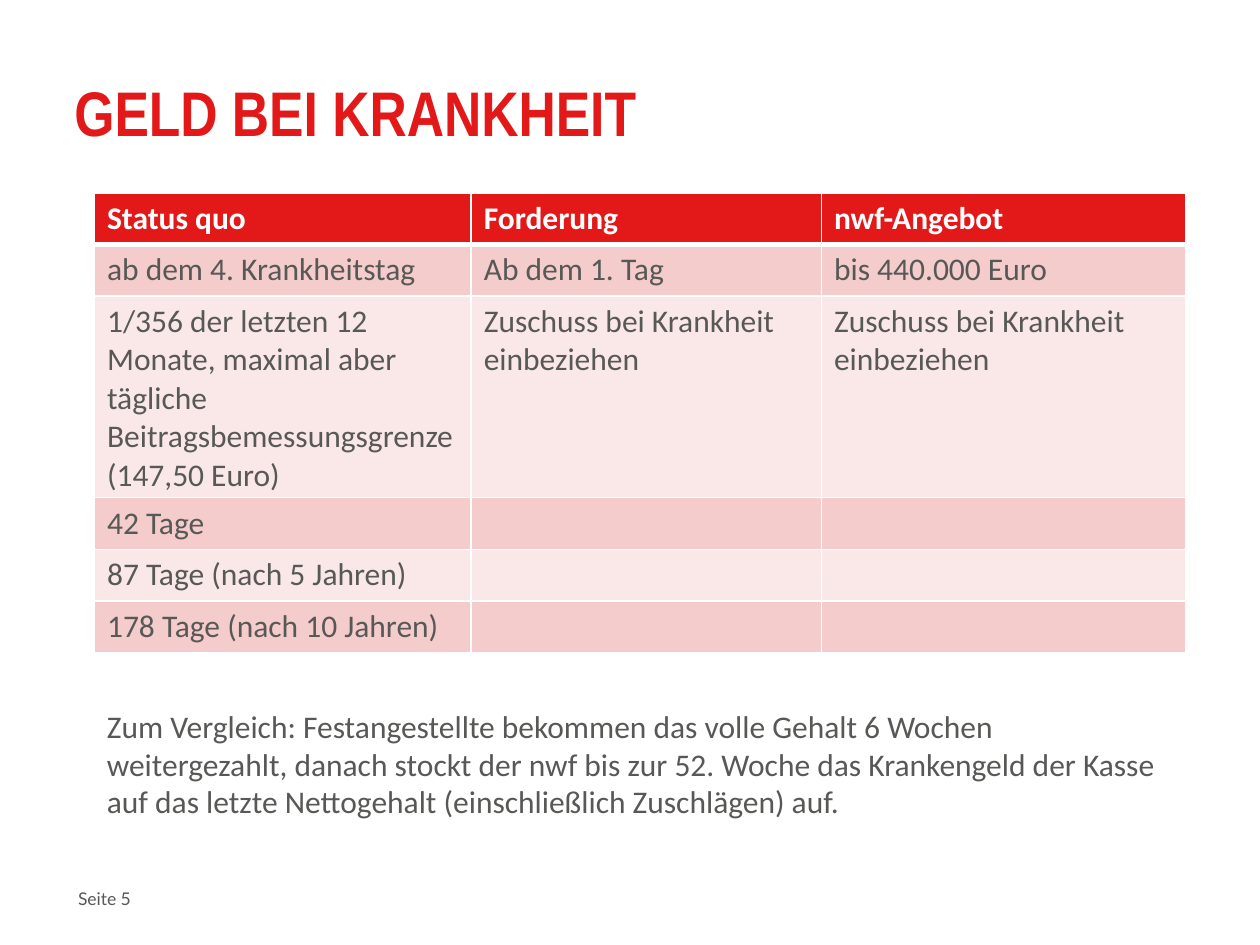
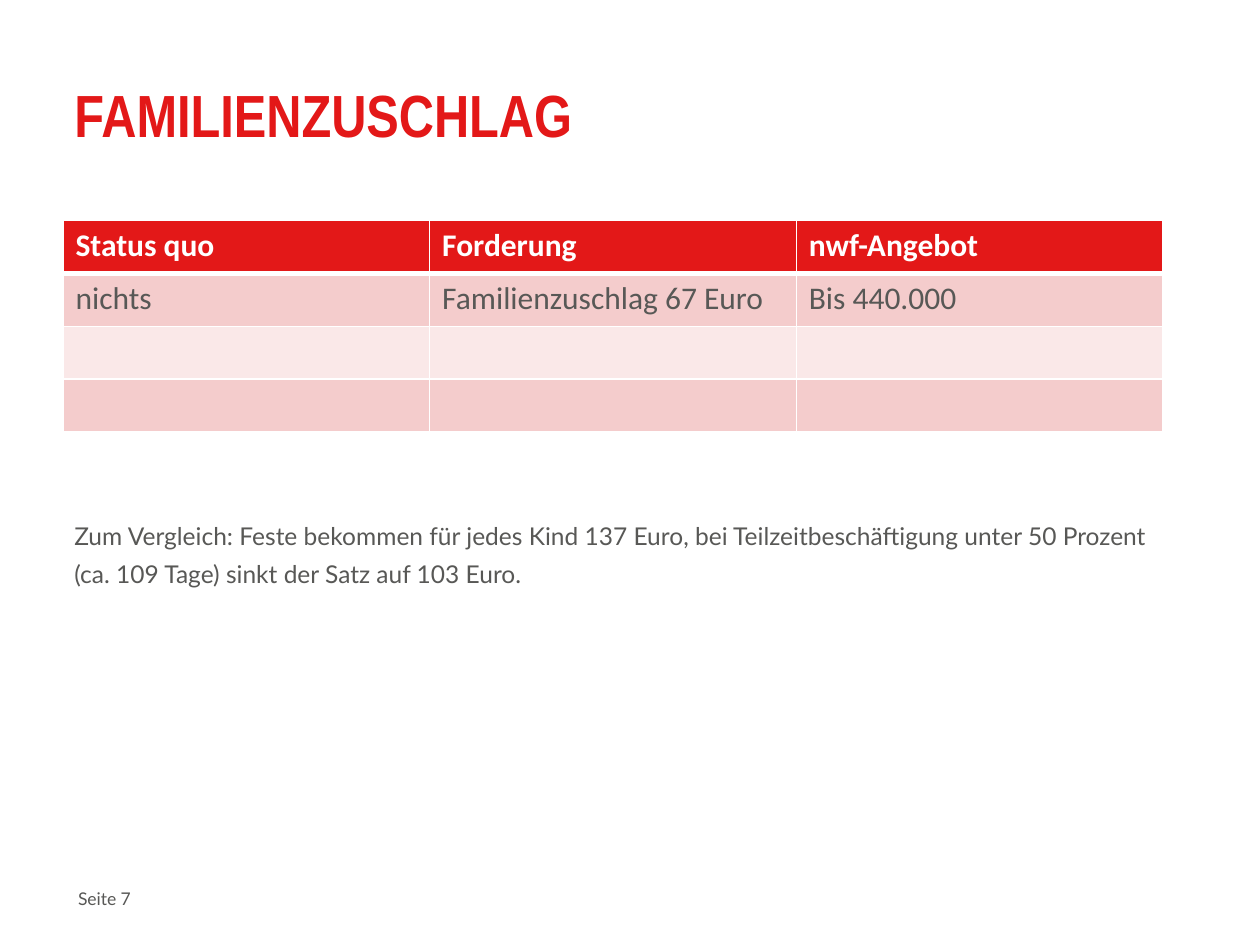
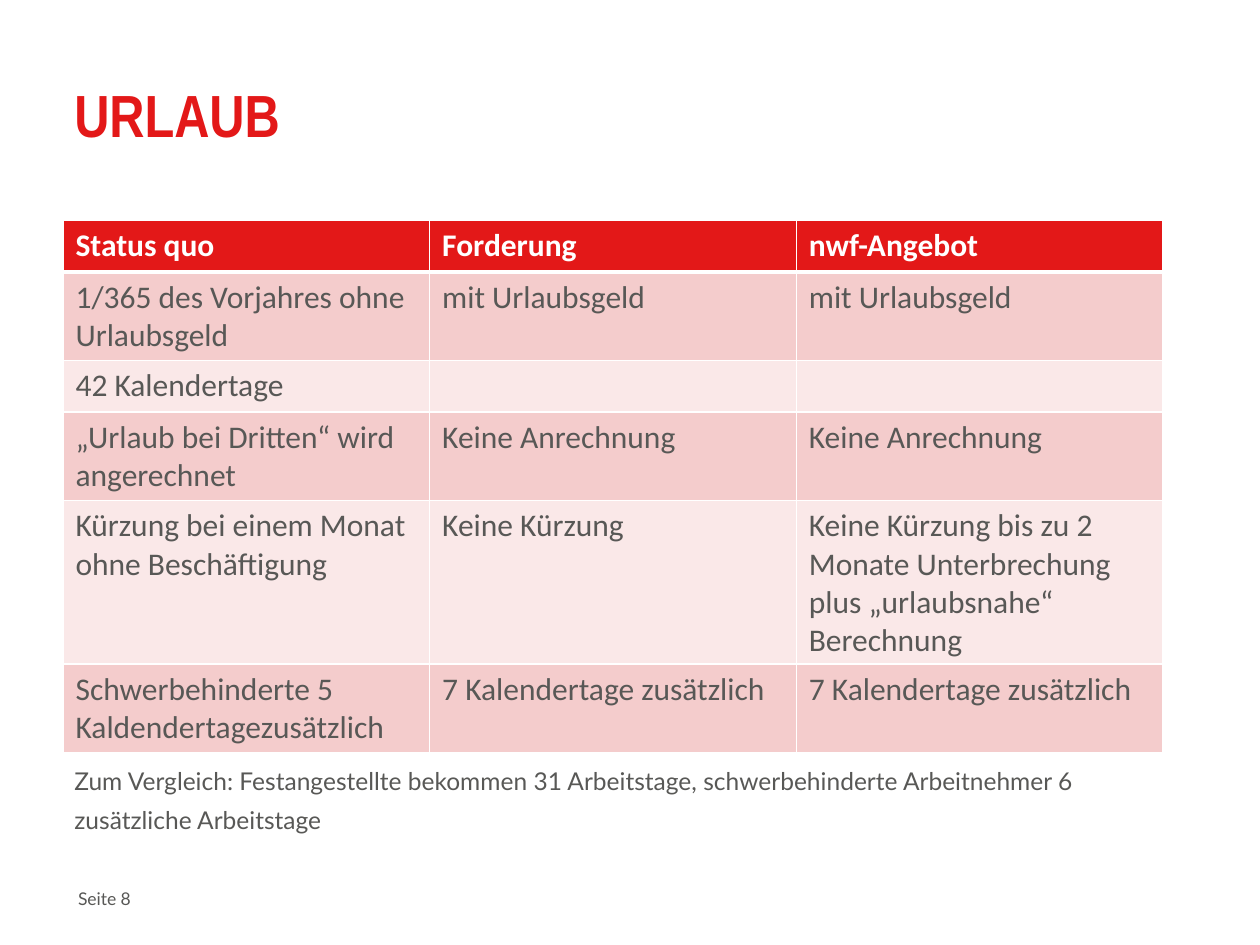
"""Build three slides that compare status quo, demand and offer in tables."""
from lxml import etree
from pptx import Presentation
from pptx.dml.color import RGBColor
from pptx.oxml import ns
from pptx.util import Inches, Pt

RED, GREY, WHITE = "E31818", "585856", "FFFFFF"
BANDS = ["F4CCCC", "FAE8E8"]
HEADINGS = ["Status quo", "Forderung", "nwf-Angebot"]


def write(text_frame, content, size, font, color, bold=False, line_spacing=None):
    text_frame.word_wrap = True
    paragraph = text_frame.paragraphs[0]
    if line_spacing:
        paragraph.line_spacing = Pt(line_spacing)
    run = paragraph.add_run()
    run.text = content
    run.font.size = Pt(size)
    run.font.name = font
    run.font.bold = bold
    run.font.color.rgb = RGBColor.from_string(color)


def add_text(slide, box, content, size, font, color, bold=False, line_spacing=None, margins=(0, 0)):
    text_frame = slide.shapes.add_textbox(*map(Inches, box)).text_frame
    text_frame.margin_left = text_frame.margin_right = Inches(margins[0])
    text_frame.margin_top = text_frame.margin_bottom = Inches(margins[1])
    write(text_frame, content, size, font, color, bold, line_spacing)


slides = [
    {
        "title": "GELD BEI KRANKHEIT", "title_size": 36, "page": 5,
        "table_at": (0.75, 1.53), "columns": [2.99, 2.78, 2.89], "row_height": 0.41,
        "rows": [
            ["ab dem 4. Krankheitstag", "Ab dem 1. Tag", "bis 440.000 Euro"],
            ["1/356 der letzten 12 Monate, maximal aber tägliche "
             "Beitragsbemessungsgrenze (147,50 Euro)",
             "Zuschuss bei Krankheit einbeziehen", "Zuschuss bei Krankheit einbeziehen"],
            ["42 Tage", "", ""],
            ["87 Tage (nach 5 Jahren)", "", ""],
            ["178 Tage (nach 10 Jahren)", "", ""],
        ],
        "note": "Zum Vergleich: Festangestellte bekommen das volle Gehalt 6 Wochen "
                "weitergezahlt, danach stockt der nwf bis zur 52. Woche das Krankengeld der Kasse "
                "auf das letzte Nettogehalt (einschließlich Zuschlägen) auf.",
        "note_box": (0.75, 5.56, 8.66, 1.01),
        "note_style": {"size": 18, "font": "Calibri", "margins": (0.1, 0.05)},
    },
    {
        "title": "FAMILIENZUSCHLAG", "title_size": 34, "page": 7,
        "table_at": (0.5, 1.75), "columns": [2.91] * 3, "row_height": 0.42,
        "rows": [
            ["nichts", "Familienzuschlag 67 Euro", "Bis 440.000"],
            ["", "", ""],
            ["", "", ""],
        ],
        "note": "Zum Vergleich: Feste bekommen für jedes Kind 137 Euro, bei Teilzeitbeschäftigung "
                "unter 50 Prozent (ca. 109 Tage) sinkt der Satz auf 103 Euro.",
        "note_box": (0.59, 4.06, 8.74, 2.68),
        "note_style": {"size": 14, "font": "Lato", "line_spacing": 22},
    },
    {
        "title": "URLAUB", "title_size": 34, "page": 8,
        "table_at": (0.5, 1.75), "columns": [2.91] * 3, "row_height": 0.41,
        "rows": [
            ["1/365 des Vorjahres ohne Urlaubsgeld", "mit Urlaubsgeld", "mit Urlaubsgeld"],
            ["42 Kalendertage", "", ""],
            ["„Urlaub bei Dritten“ wird angerechnet", "Keine Anrechnung", "Keine Anrechnung"],
            ["Kürzung bei einem Monat ohne Beschäftigung", "Keine Kürzung",
             "Keine Kürzung bis zu 2 Monate Unterbrechung plus „urlaubsnahe“ Berechnung"],
            ["Schwerbehinderte 5 Kaldendertagezusätzlich", "7 Kalendertage zusätzlich",
             "7 Kalendertage zusätzlich"],
        ],
        "note": "Zum Vergleich: Festangestellte bekommen 31 Arbeitstage, schwerbehinderte "
                "Arbeitnehmer 6 zusätzliche Arbeitstage",
        "note_box": (0.59, 6.01, 8.65, 0.73),
        "note_style": {"size": 14, "font": "Lato", "line_spacing": 22},
    },
]

presentation = Presentation()
presentation.slide_width, presentation.slide_height = Inches(10), Inches(7.5)

for content in slides:
    slide = presentation.slides.add_slide(presentation.slide_layouts[6])
    add_text(slide, (0.62, 7.05, 0.76, 0.17), f"Seite {content['page']}", 10, "Lato", GREY)
    add_text(slide, (0.59, 0.71, 4.8, 0.99), content["title"], content["title_size"],
             "Arial Narrow", RED, bold=True, line_spacing=34)

    rows = [HEADINGS] + content["rows"]
    size = sum(content["columns"]), len(rows) * content["row_height"]
    table = slide.shapes.add_table(
        len(rows), len(HEADINGS), *map(Inches, content["table_at"] + size)).table
    for column, width in zip(table.columns, content["columns"]):
        column.width = Inches(width)
    for row_index, row in enumerate(rows):
        table.rows[row_index].height = Inches(content["row_height"])
        is_header = row_index == 0
        for column_index, label in enumerate(row):
            cell = table.cell(row_index, column_index)
            properties = cell._tc.get_or_add_tcPr()
            for side in "LRTB":
                below_header = (row_index, side) in [(0, "B"), (1, "T")]
                line = etree.SubElement(properties, ns.qn(f"a:ln{side}"),
                                        w=str(Pt(3 if below_header else 1)))
                line_fill = etree.SubElement(line, ns.qn("a:solidFill"))
                etree.SubElement(line_fill, ns.qn("a:srgbClr"), val=WHITE)
            cell.fill.solid()
            cell.fill.fore_color.rgb = RGBColor.from_string(
                RED if is_header else BANDS[(row_index - 1) % 2])
            if label:
                write(cell.text_frame, label, 18, "Calibri", WHITE if is_header else GREY, is_header)

    add_text(slide, content["note_box"], content["note"], color=GREY, **content["note_style"])

presentation.save("out.pptx")
